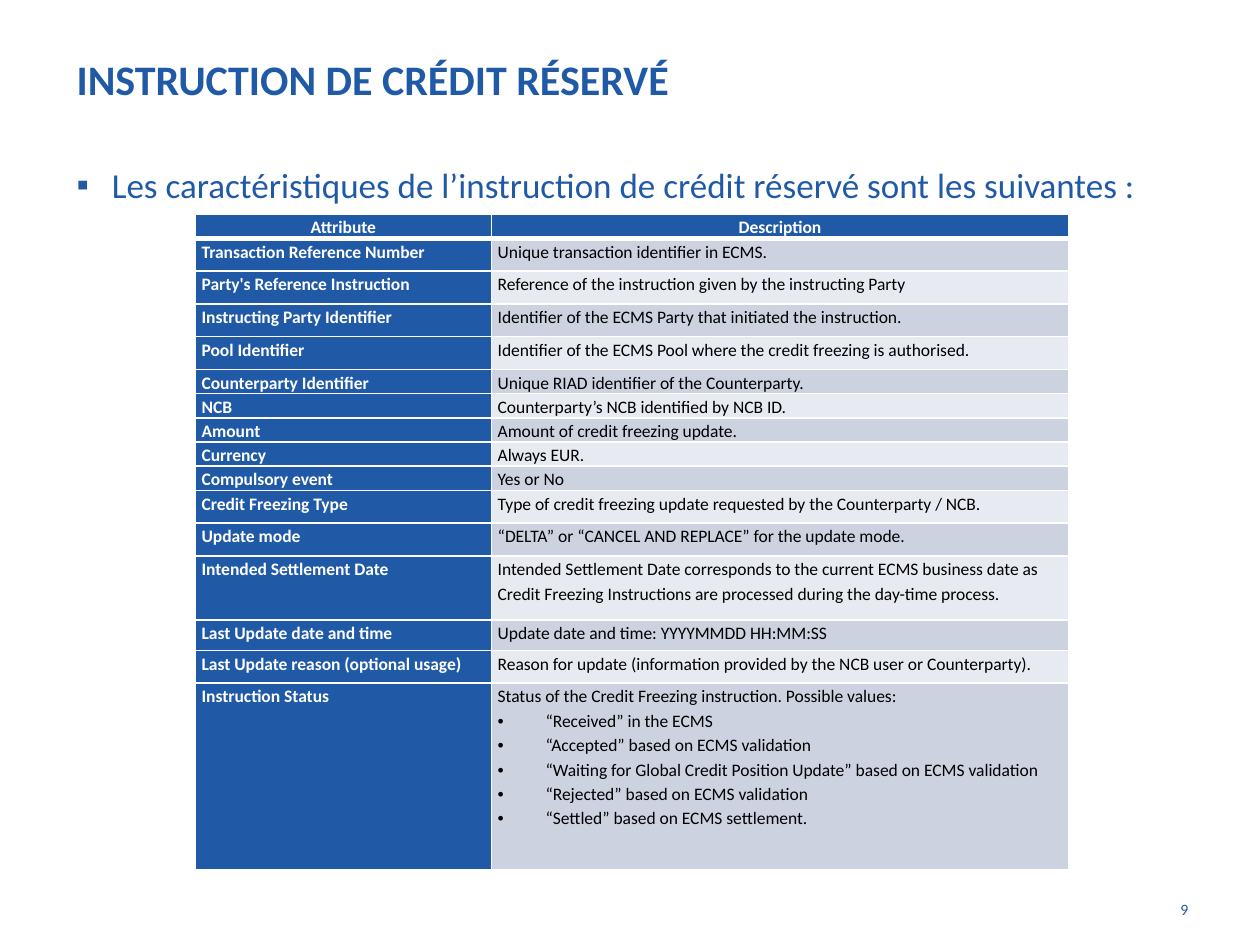
from lxml import etree
from pptx import Presentation
from pptx.dml.color import RGBColor
from pptx.enum.text import MSO_ANCHOR, PP_ALIGN
from pptx.oxml.ns import qn
from pptx.util import Inches, Pt

LEFT, MID, RIGHT, JUST = PP_ALIGN.LEFT, PP_ALIGN.CENTER, PP_ALIGN.RIGHT, PP_ALIGN.JUSTIFY
CENTRE = MSO_ANCHOR.MIDDLE
FONT = "Calibri"
HUES = {"blue": "205AA7", "white": "FFFFFF", "black": "000000", "dark": "CDD2E1", "light": "E8EAF1"}
COLS = [2.35, 4.58]
ROWS = [
    (0.18, "Attribute", "Description"),
    (0.26, "Transaction Reference Number", "Unique transaction identifier in ECMS."),
    (0.26, "Party's Reference Instruction", "Reference of the instruction given by the instructing Party"),
    (0.26, "Instructing Party Identifier", "Identifier of the ECMS Party that initiated the instruction."),
    (0.26, "Pool Identifier", "Identifier of the ECMS Pool where the credit freezing is authorised."),
    (0.13, "Counterparty Identifier", "Unique RIAD identifier of the Counterparty."),
    (0.13, "NCB", "Counterparty’s NCB identified by NCB ID."),
    (0.13, "Amount", "Amount of credit freezing update."),
    (0.13, "Currency", "Always EUR."),
    (0.13, "Compulsory event", "Yes or No"),
    (0.26, "Credit Freezing Type", "Type of credit freezing update requested by the Counterparty / NCB."),
    (0.26, "Update mode", "“DELTA” or “CANCEL AND REPLACE” for the update mode."),
    (0.51, "Intended Settlement Date",
     "Intended Settlement Date corresponds to the current ECMS business date as "
     "Credit Freezing Instructions are processed during the day-time process."),
    (0.24, "Last Update date and time", "Update date and time: YYYYMMDD HH:MM:SS"),
    (0.26, "Last Update reason (optional usage)",
     "Reason for update (information provided by the NCB user or Counterparty)."),
    (1.48, "Instruction Status", "Status of the Credit Freezing instruction. Possible values:"),
]
STATES = [
    "“Received” in the ECMS",
    "“Accepted” based on ECMS validation",
    "“Waiting for Global Credit Position Update” based on ECMS validation",
    "“Rejected” based on ECMS validation",
    "“Settled” based on ECMS settlement.",
]


def tint(hue):
    """Return the named colour."""
    return RGBColor.from_string(HUES[hue])


def style(para, size, hue, bold=False, align=LEFT):
    """Align a paragraph and format its runs."""
    para.alignment = align
    for run in para.runs:
        font = run.font
        font.name, font.size, font.bold = FONT, Pt(size), bold
        font.color.rgb = tint(hue)


def bullet(para, mark, indent):
    """Give a paragraph a hanging bullet."""
    props = para._p.get_or_add_pPr()
    props.set("marL", str(Inches(indent)))
    props.set("indent", str(-Inches(indent)))
    etree.SubElement(props, qn("a:buFont")).set("typeface", "Arial")
    etree.SubElement(props, qn("a:buChar")).set("char", mark)


def write(slide, box, text, size, bold=False, align=LEFT, mark=None):
    """Place a blue line of text in the box."""
    frame = slide.shapes.add_textbox(*map(Inches, box)).text_frame
    frame.word_wrap = True
    frame.text = text
    para = frame.paragraphs[0]
    if mark:
        bullet(para, mark, 0.28)
    style(para, size, "blue", bold, align)
    return frame


def border(cell, row):
    """Draw white cell edges, thick under the header."""
    props = cell._tc.get_or_add_tcPr()
    for side in "LRTB":
        thick = (row, side) in ((0, "B"), (1, "T"))
        line = etree.SubElement(props, qn(f"a:ln{side}"), w=str(Pt(3 if thick else 1)))
        fill = etree.SubElement(line, qn("a:solidFill"))
        etree.SubElement(fill, qn("a:srgbClr")).set("val", HUES["white"])


def fill_cell(cell, row, col, text):
    """Write and format one cell of the table."""
    head = row == 0 or col == 0
    cell.margin_left = cell.margin_right = Inches(0.05)
    cell.margin_top = cell.margin_bottom = 0
    border(cell, row)
    cell.fill.solid()
    cell.fill.fore_color.rgb = tint("blue" if head else "dark" if row % 2 else "light")
    frame = cell.text_frame
    frame.text = text
    for rank, para in enumerate(frame.paragraphs):
        if rank:
            bullet(para, "•", 0.38)
        style(para, 10, "white" if head else "black", head, LEFT if row else MID)
        para.line_spacing = 1.15


def grid(slide, box):
    """Place the table of attributes in the box."""
    table = slide.shapes.add_table(len(ROWS), len(COLS), *map(Inches, box)).table
    table.horz_banding = False
    for col, width in enumerate(COLS):
        table.columns[col].width = Inches(width)
    for row, (height, *texts) in enumerate(ROWS):
        table.rows[row].height = Inches(height)
        if row == len(ROWS) - 1:
            texts[1] = "\n".join([texts[1], *STATES])
        for col, text in enumerate(texts):
            fill_cell(table.cell(row, col), row, col, text)


def main():
    """Build the slide and save it."""
    deck = Presentation()
    deck.slide_width, deck.slide_height = Inches(10), Inches(7.5)
    slide = deck.slides.add_slide(deck.slide_layouts[6])
    title = write(slide, (0.51, 0, 9, 1.25), "INSTRUCTION DE CRÉDIT RÉSERVÉ", 24, bold=True)
    title.vertical_anchor = CENTRE
    write(slide, (8.94, 7.09, 0.59, 0.39), "9", 9, align=RIGHT)
    write(slide, (0.51, 1.25, 9, 5.06),
          "Les caractéristiques de l’instruction de crédit réservé sont les suivantes :",
          20, align=JUST, mark="▪")
    grid(slide, (1.55, 1.7, sum(COLS), 5.18))
    deck.save("out.pptx")


if __name__ == "__main__":
    main()
